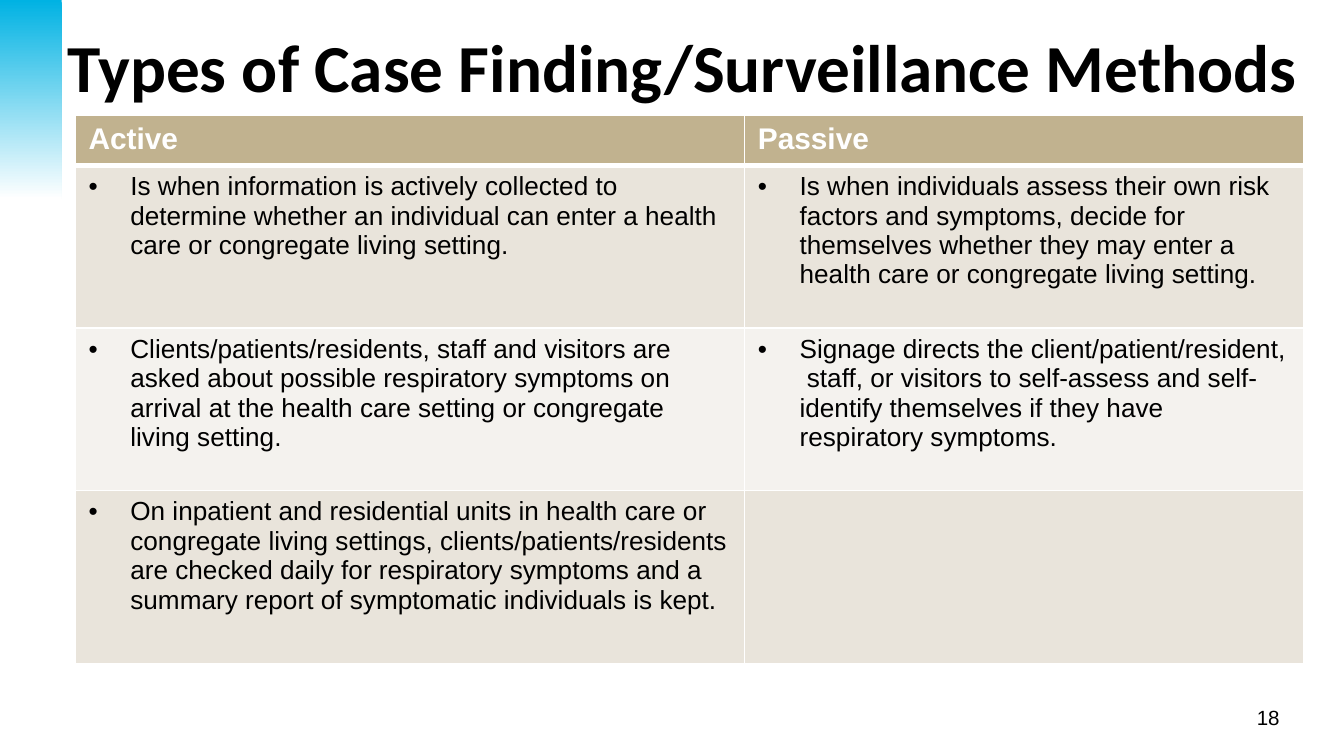
"""Builds the slide comparing active and passive case finding."""
from lxml import etree
from pptx import Presentation, util as u
from pptx.dml.color import RGBColor
from pptx.enum import shapes, text
from pptx.oxml import ns

Inches, Pt = u.Inches, u.Pt


def rgb(value):
    return RGBColor.from_string(value)


class SlideBuilder:
    body_font, title_font = "Arial", "Calibri"
    black, white = "000000", "FFFFFF"
    header_fill, band_fills = "C1B28F", ("E9E4DB", "F4F2EE")

    def __init__(self, slide):
        self.slide = slide

    def style(self, paragraph, size, color=black, bold=False, font=body_font):
        paragraph.font.name = font
        paragraph.font.size = Pt(size)
        paragraph.font.bold = bold
        paragraph.font.color.rgb = rgb(color)

    def accent(self, left, top, width, height, colors):
        band = self.slide.shapes.add_shape(
            shapes.MSO_SHAPE.RECTANGLE, Inches(left), Inches(top), Inches(width), Inches(height))
        band.shadow.inherit = False
        band.line.fill.background()
        band.fill.gradient()
        band.fill.gradient_angle = 270
        for stop, color, position in zip(band.fill.gradient_stops, colors, (0, 1)):
            stop.color.rgb = rgb(color)
            stop.position = position

    def title(self, wording, left, top, width, height):
        heading = self.slide.shapes.title
        heading.left, heading.top = Inches(left), Inches(top)
        heading.width, heading.height = Inches(width), Inches(height)
        frame = heading.text_frame
        frame.text = wording
        frame.word_wrap = True
        frame.auto_size = text.MSO_AUTO_SIZE.NONE
        frame.vertical_anchor = text.MSO_ANCHOR.TOP
        frame.paragraphs[0].alignment = text.PP_ALIGN.LEFT
        self.style(frame.paragraphs[0], 36, bold=True, font=self.title_font)

    def page_number(self, number, left, top, width, height):
        box = self.slide.shapes.add_textbox(Inches(left), Inches(top), Inches(width), Inches(height))
        frame = box.text_frame
        frame.text = number
        frame.word_wrap = True
        frame.vertical_anchor = text.MSO_ANCHOR.MIDDLE
        frame.paragraphs[0].alignment = text.PP_ALIGN.RIGHT
        self.style(frame.paragraphs[0], 11)

    def borders(self, cell, **widths):
        properties = cell._tc.get_or_add_tcPr()
        for side in "LRTB":
            line = etree.SubElement(properties, ns.qn(f"a:ln{side}"), w=str(Pt(widths.get(side, 1))))
            fill = etree.SubElement(line, ns.qn("a:solidFill"))
            etree.SubElement(fill, ns.qn("a:srgbClr"), val=self.white)

    def bullet(self, paragraph, indent=0.31):
        properties = paragraph._p.get_or_add_pPr()
        properties.set("marL", str(Inches(indent)))
        properties.set("indent", str(-Inches(indent)))
        bullet_font = etree.Element(ns.qn("a:buFont"), typeface=self.body_font)
        bullet_char = etree.Element(ns.qn("a:buChar"), char="•")
        properties.insert(0, bullet_font)
        properties.insert(1, bullet_char)

    def table(self, rows, left, top, widths, heights):
        grid = self.slide.shapes.add_table(
            len(rows), len(widths), Inches(left), Inches(top),
            Inches(sum(widths)), Inches(sum(heights))).table
        for column, width in zip(grid.columns, widths):
            column.width = Inches(width)
        for r, (wordings, height) in enumerate(zip(rows, heights)):
            grid.rows[r].height = Inches(height)
            for c, wording in enumerate(wordings):
                self.cell(grid.cell(r, c), wording, r)

    def cell(self, cell, wording, row):
        self.borders(cell, **{0: {"B": 3}, 1: {"T": 3}}.get(row, {}))
        cell.fill.solid()
        cell.fill.fore_color.rgb = rgb(self.band_fills[(row - 1) % 2] if row else self.header_fill)
        if not wording:
            return
        cell.text = wording
        paragraph = cell.text_frame.paragraphs[0]
        if row:
            self.style(paragraph, 14)
            self.bullet(paragraph)
        else:
            self.style(paragraph, 16, self.white, bold=True)


def main():
    deck = Presentation()
    deck.slide_width = Inches(10)
    deck.slide_height = deck.slide_width * 9 // 16
    builder = SlideBuilder(deck.slides.add_slide(deck.slide_layouts[5]))
    builder.page_number("18", 8.45, 5.19, 1.17, 0.29)
    builder.accent(0, 0, 0.46, 1.48, ("00B2E3", "FFFFFF"))
    builder.title("Types of Case Finding/Surveillance Methods", 0.4, 0.14, 9.6, 0.96)
    methods = [
        ("Active", "Passive"),
        ("Is when information is actively collected to determine whether an individual can enter "
         "a health care or congregate living setting.",
         "Is when individuals assess their own risk factors and symptoms, decide for themselves "
         "whether they may enter a health care or congregate living setting."),
        ("Clients/patients/residents, staff and visitors are asked about possible respiratory "
         "symptoms on arrival at the health care setting or congregate living setting.",
         "Signage directs the client/patient/resident,  staff, or visitors to self-assess and "
         "self-identify themselves if they have respiratory symptoms."),
        ("On inpatient and residential units in health care or congregate living settings, "
         "clients/patients/residents are checked daily for respiratory symptoms and a summary "
         "report of symptomatic individuals is kept.", ""),
    ]
    builder.table(methods, 0.56, 0.86, (4.98, 4.16), (0.37, 1.21, 1.21, 1.29))
    deck.save("out.pptx")


if __name__ == "__main__":
    main()
